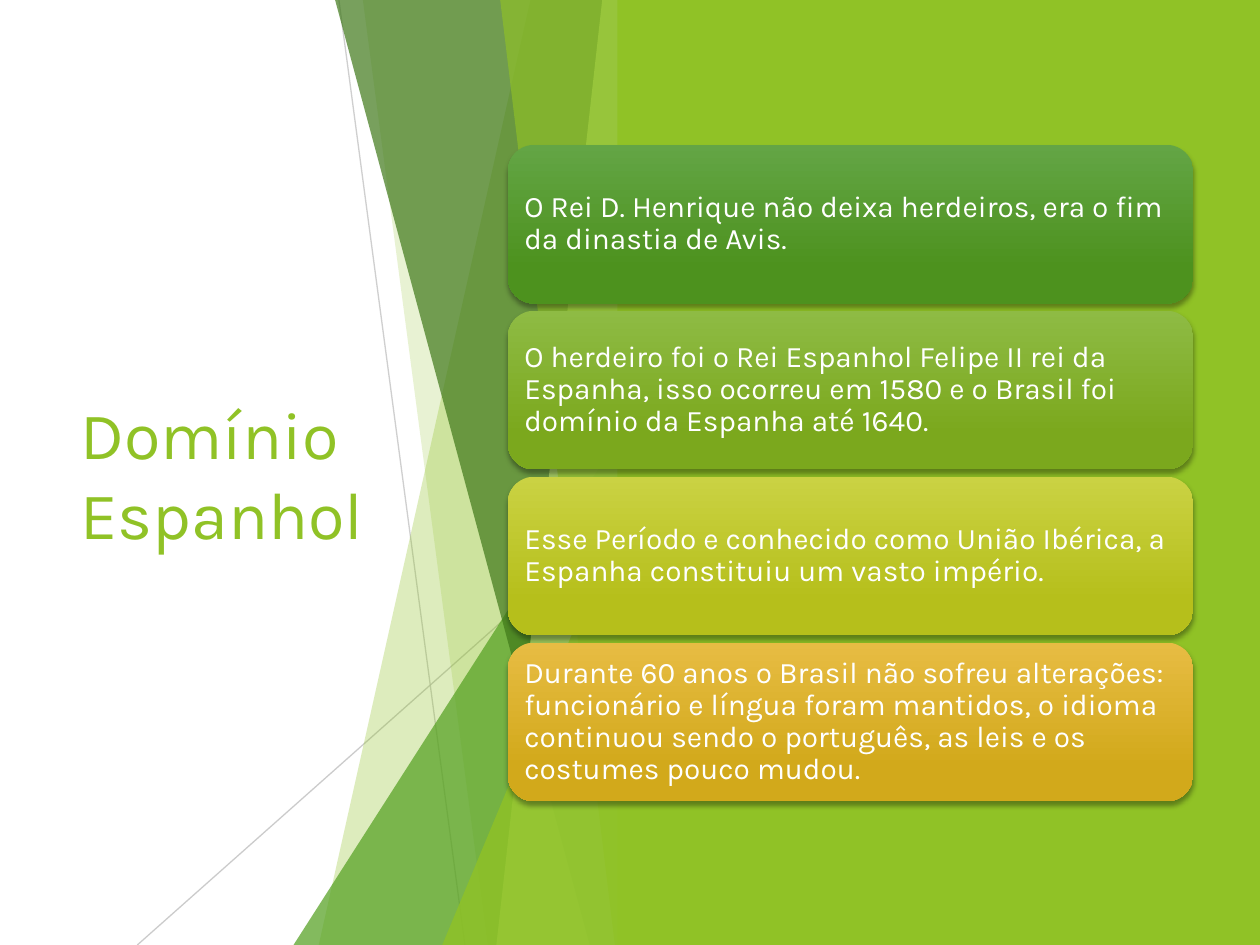
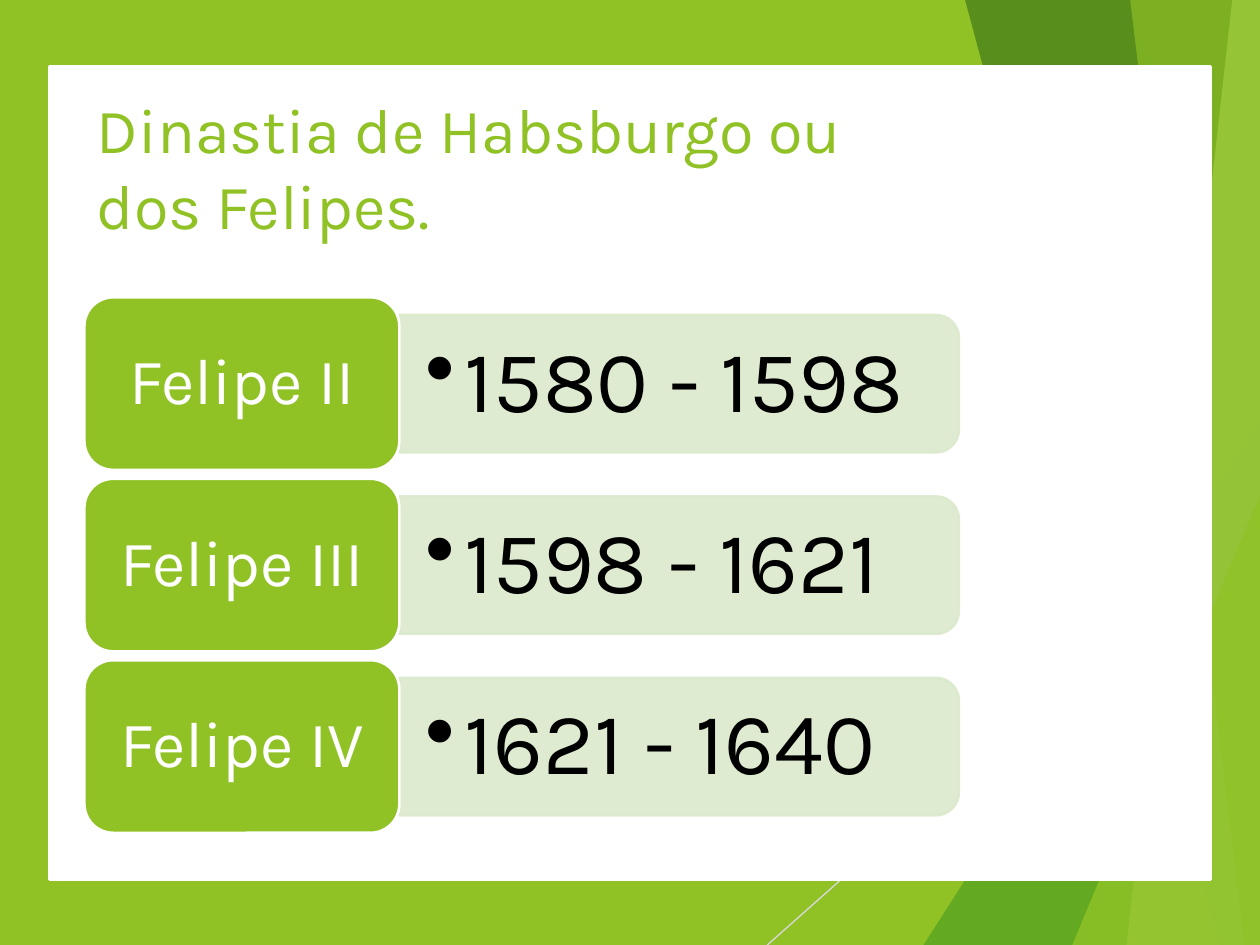
from pptx import Presentation
from pptx.dml.color import RGBColor
from pptx.enum.shapes import MSO_CONNECTOR as Conn, MSO_SHAPE as Shape
from pptx.enum.text import MSO_ANCHOR as Anchor, PP_ALIGN as Align
from pptx.oxml.ns import qn
from pptx.util import Inches, Pt
from lxml.etree import SubElement

FONT = "Karla"
WIDE, HIGH = 10, 7.5
WHITE = RGBColor(0xFF, 0xFF, 0xFF)
BLACK = RGBColor(0, 0, 0)
LIME = RGBColor(0x90, 0xC2, 0x26)
GREEN = RGBColor(0x54, 0xA0, 0x21)
FOREST = RGBColor(0x3F, 0x78, 0x19)
PALE = RGBColor(0xC0, 0xE4, 0x74)
MIST = RGBColor(0xDB, 0xE9, 0xCD)
GREY = RGBColor(0xBF, 0xBF, 0xBF)
SILVER = RGBColor(0xD9, 0xD9, 0xD9)

# Facets from back to front, measured leftwards from their right edge:
# quads have a top and a bottom width, triangles a width and a height
FACETS = [
    ("quad", 0.79, 2.47, LIME, 30),
    ("quad", 2.12, 1.13, LIME, 20),
    ("tri", 2.67, 4.17, GREEN, 72),
    ("quad", 2.34, 0.32, FOREST, 70),
    ("quad", 0.22, 1.06, PALE, 70),
    ("quad", 1.03, 0.12, LIME, 65),
    ("tri", 1.49, 3.57, LIME, 80),
]

CARDS = [
    ("O Rei D. Henrique não deixa herdeiros, era o fim da dinastia de Avis.",
     RGBColor(0x63, 0xA5, 0x45), RGBColor(0x4D, 0x92, 0x1E)),
    ("O herdeiro foi o Rei Espanhol Felipe II rei da Espanha, isso ocorreu "
     "em 1580 e o Brasil foi domínio da Espanha até 1640.",
     RGBColor(0x8E, 0xBB, 0x44), RGBColor(0x7B, 0xA8, 0x1D)),
    ("Esse Período e conhecido como União Ibérica, a Espanha constituiu um "
     "vasto império.",
     RGBColor(0xCA, 0xD2, 0x43), RGBColor(0xB6, 0xBF, 0x1B)),
    ("Durante 60 anos o Brasil não sofreu alterações: funcionário e língua "
     "foram mantidos, o idioma continuou sendo o português, as leis e os "
     "costumes pouco mudou.",
     RGBColor(0xE7, 0xBC, 0x43), RGBColor(0xD2, 0xA9, 0x1B)),
]

REIGNS = [
    ("Felipe II", "1580 - 1598"),
    ("Felipe III", "1598 - 1621"),
    ("Felipe IV", "1621 - 1640"),
]


def fade(shape, alpha):
    """Give every colour of a shape the same opacity, in percent."""
    for node in list(shape._element.spPr.iter(qn("a:srgbClr"))):
        SubElement(node, qn("a:alpha"), val=str(alpha * 1000))


def paint(shape, fill, line=None, width=1.5):
    shape.shadow.inherit = False
    shape.fill.solid()
    shape.fill.fore_color.rgb = fill
    if line is None:
        shape.line.fill.background()
    else:
        shape.line.color.rgb = line
        shape.line.width = Pt(width)
    return shape


def add_box(slide, kind, x, y, w, h):
    return slide.shapes.add_shape(
        kind, Inches(x), Inches(y), Inches(w), Inches(h))


def add_area(slide, x, y, w, h):
    return slide.shapes.add_textbox(
        Inches(x), Inches(y), Inches(w), Inches(h))


def write(shape, text, size, color, anchor=Anchor.MIDDLE, align=Align.LEFT,
          pad=(0.1, 0.05), space=None):
    frame = shape.text_frame
    frame.word_wrap = True
    frame.vertical_anchor = anchor
    frame.margin_left = frame.margin_right = Inches(pad[0])
    frame.margin_top = frame.margin_bottom = Inches(pad[1])
    frame.text = text
    para = frame.paragraphs[0]
    para.alignment = align
    if space:
        para.line_spacing = space
    font = para.runs[0].font
    font.name, font.size, font.color.rgb = FONT, Pt(size), color
    return para


def add_title(slide, text, size, box, anchor):
    write(add_area(slide, *box), text, size, LIME, anchor)


def add_ray(slide, x1, y1, x2, y2, color, alpha=100):
    ray = slide.shapes.add_connector(
        Conn.STRAIGHT, Inches(x1), Inches(y1), Inches(x2), Inches(y2))
    ray.line.color.rgb = color
    ray.line.width = Pt(0.75)
    SubElement(ray._element.spPr, qn("a:effectLst"))
    if alpha < 100:
        fade(ray, alpha)


def add_facets(slide, right):
    for kind, a, b, color, alpha in FACETS:
        if kind == "tri":
            facet = add_box(slide, Shape.ISOSCELES_TRIANGLE,
                            right - a, HIGH - b, a, b)
            facet.adjustments[0] = 1
        else:
            form = slide.shapes.build_freeform(Inches(right - a), 0)
            form.add_line_segments([
                (Inches(right), 0),
                (Inches(right), Inches(HIGH)),
                (Inches(right - b), Inches(HIGH)),
            ], close=True)
            facet = form.convert_to_shape()
        fade(paint(facet, color), alpha)


def add_cards(slide, x, y, w, h):
    tall = 1.26
    step = (h - tall) / (len(CARDS) - 1)
    for i, (text, top, base) in enumerate(CARDS):
        card = add_box(slide, Shape.ROUNDED_RECTANGLE,
                       x, y + i * step, w, tall)
        paint(card, base)
        card.fill.gradient()
        card.fill.gradient_angle = 270
        for stop, color, at in zip(card.fill.gradient_stops,
                                   (top, base), (0, 0.78)):
            stop.color.rgb, stop.position = color, at
        # Soft shadow straight below
        effect = card._element.spPr.find(qn("a:effectLst"))
        cast = SubElement(effect, qn("a:outerShdw"), blurRad=str(Pt(3)),
                          dist=str(Pt(2)), dir="5400000", rotWithShape="0")
        tint = SubElement(cast, qn("a:srgbClr"), val="000000")
        SubElement(tint, qn("a:alpha"), val="35000")
        write(card, text, 17, WHITE, pad=(0.07, 0.07), space=0.9)


def add_reigns(slide, x, y, w, h):
    tall, name_w, inset = 1.37, 2.5, 0.14
    step = (h - tall) / (len(REIGNS) - 1)
    bar_x, bar_w, bar_h = x + name_w, w - name_w, tall - 2 * inset
    for i, (king, years) in enumerate(REIGNS):
        top = y + i * step
        # Bar turned a quarter, so its rounded corners face right
        shift = (bar_w - bar_h) / 2
        bar = add_box(slide, Shape.ROUND_2_SAME_RECTANGLE,
                      bar_x + shift, top + inset - shift, bar_h, bar_w)
        bar.rotation = 90
        fade(paint(bar, MIST, MIST), 90)
        # Bulleted years
        area = add_area(slide, bar_x, top + inset + 0.05, bar_w - 0.05,
                        bar_h - 0.1)
        para = write(area, years, 50, BLACK, pad=(0.21, 0.1), space=0.9)
        props = para._p.get_or_add_pPr()
        props.set("marL", str(Inches(0.31)))
        props.set("indent", str(-Inches(0.31)))
        SubElement(props, qn("a:buChar"), char="•")
        # Name
        name = add_box(slide, Shape.ROUNDED_RECTANGLE, x, top, name_w, tall)
        paint(name, LIME, WHITE)
        write(name, king, 37, WHITE, align=Align.CENTER,
              pad=(0.15, 0.08), space=0.9)


def make_rule(slide):
    """Spanish rule: title on the left, four cards on a lime panel."""
    edge = WIDE / 2
    add_title(slide, "Domínio Espanhol", 38, (0.54, 1.51, 2.91, 4.48),
              Anchor.MIDDLE)
    add_ray(slide, edge - 2.31, 0, edge - 1.31, HIGH, GREY, 75)
    add_ray(slide, edge, 4.03, edge - 3.91, HIGH, GREY, 80)
    add_facets(slide, edge)
    paint(add_box(slide, Shape.RECTANGLE, 4.9, 0, 5.1, HIGH), LIME)
    add_cards(slide, 4.03, 1.15, 5.44, 5.21)


def make_kings(slide):
    """Habsburg kings: white sheet on lime, a row for each reign."""
    back = slide.background.fill
    back.solid()
    back.fore_color.rgb = LIME
    add_ray(slide, WIDE, 4.03, WIDE - 3.91, HIGH, SILVER)
    add_facets(slide, WIDE)
    sheet = add_box(slide, Shape.RECTANGLE, 0.39, 0.53, 9.22, 6.45)
    paint(sheet, WHITE, WHITE, 1.75)
    add_title(slide, "Dinastia de Habsburgo ou dos Felipes.", 36,
              (0.67, 0.67, 6.94, 1.44), Anchor.TOP)
    add_reigns(slide, 0.67, 2.36, 6.94, 4.25)


def main():
    deck = Presentation()
    deck.slide_width, deck.slide_height = Inches(WIDE), Inches(HIGH)
    for make in (make_rule, make_kings):
        make(deck.slides.add_slide(deck.slide_layouts[6]))
    deck.save("out.pptx")


if __name__ == "__main__":
    main()
